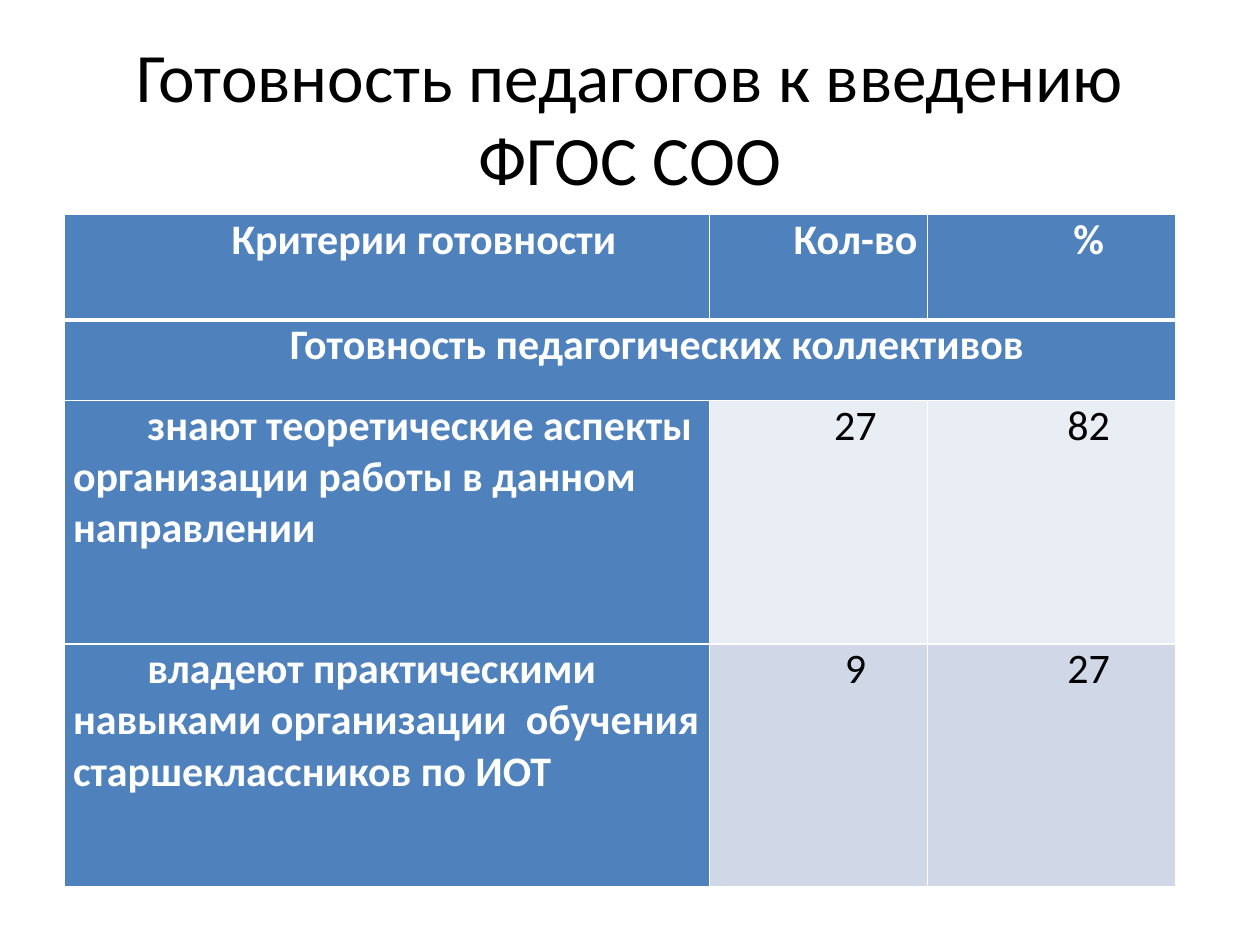
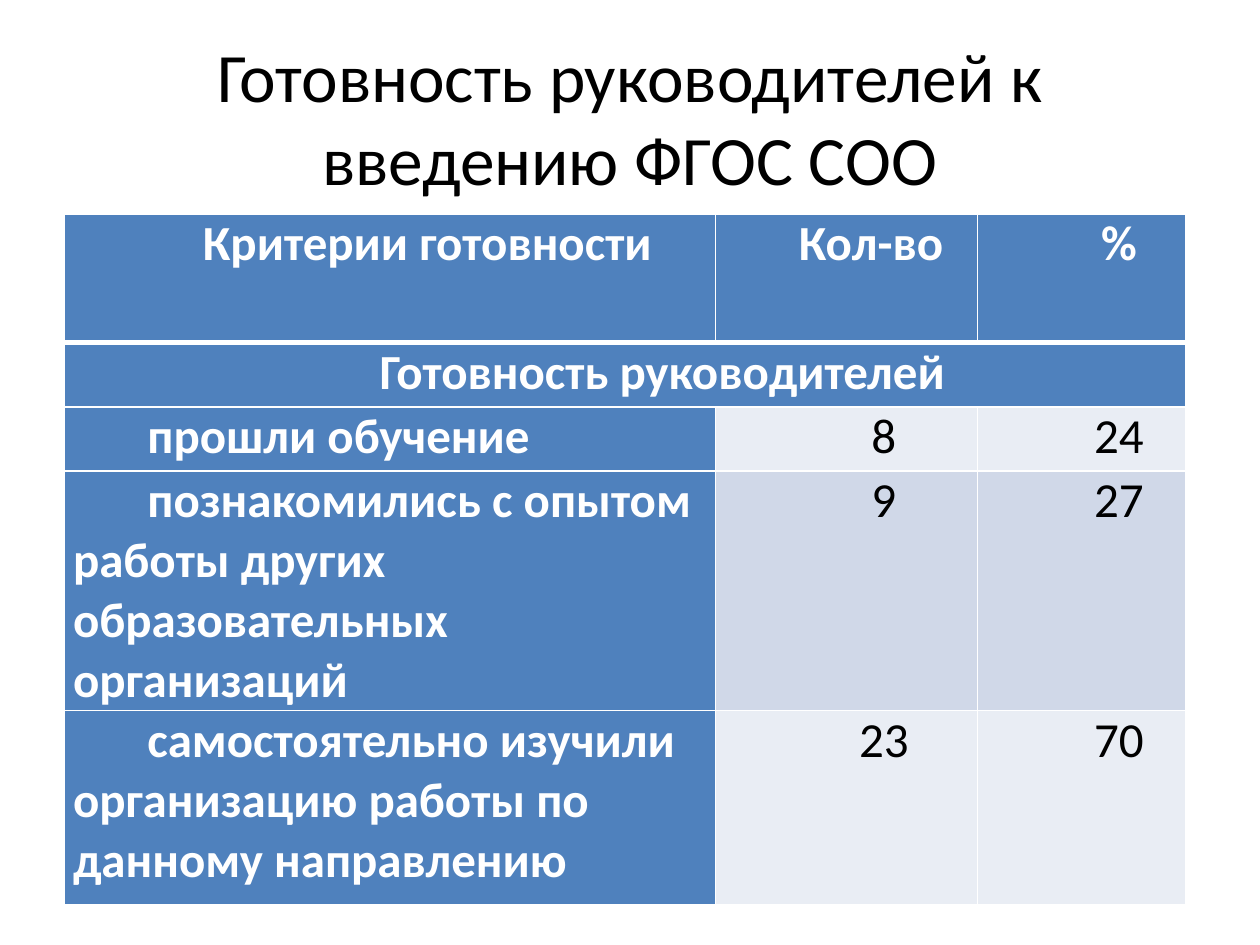
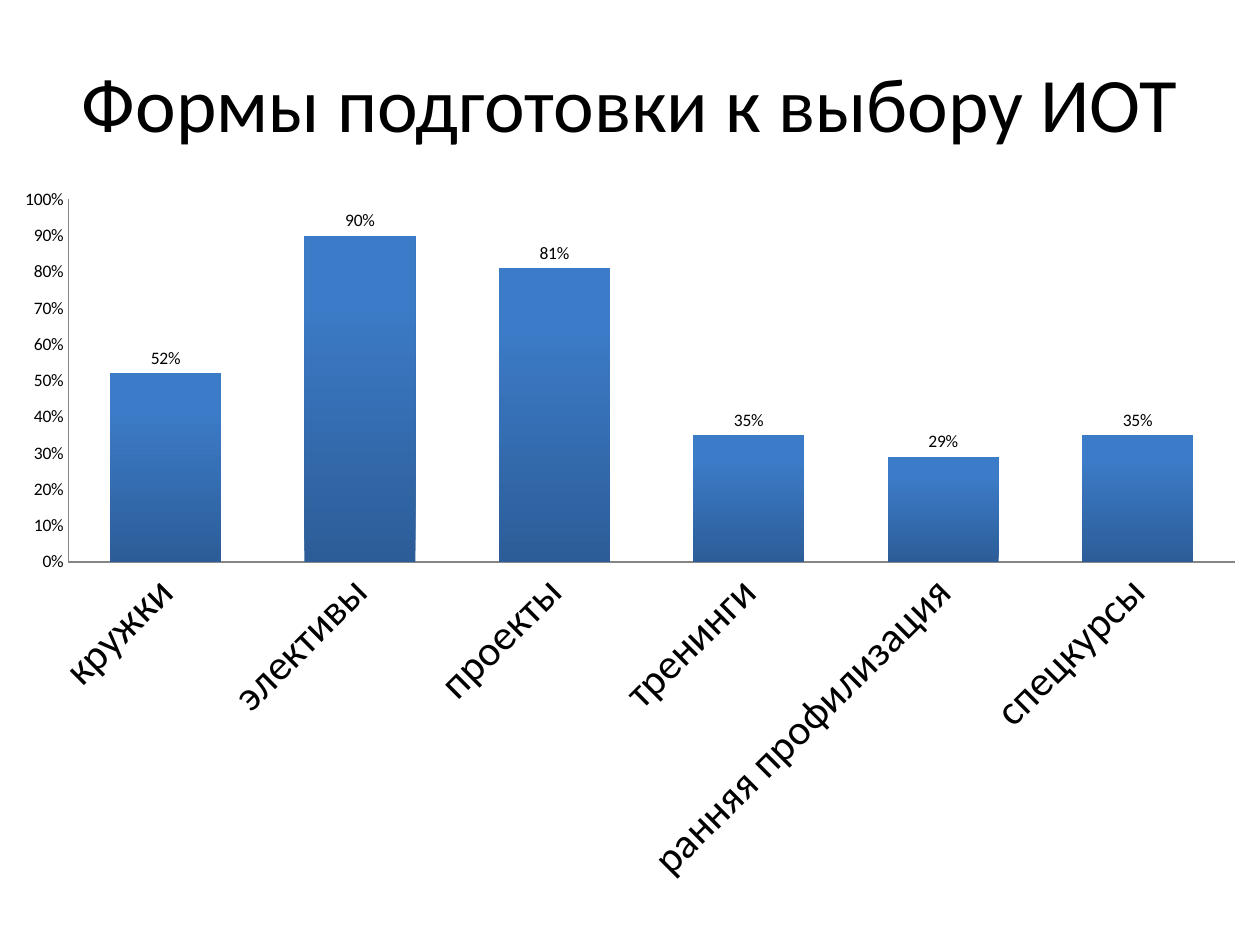
import dataclasses
import typing

import lxml.etree
import pptx
import pptx.chart.chart
import pptx.chart.data
import pptx.dml.color
import pptx.enum.chart
import pptx.enum.text
import pptx.oxml.ns
import pptx.presentation
import pptx.slide
import pptx.table
import pptx.util

RGBColor = pptx.dml.color.RGBColor
CENTER = pptx.enum.text.PP_ALIGN.CENTER
LEFT = pptx.enum.text.PP_ALIGN.LEFT

# Shared style
FONT = "Calibri"
BLACK = RGBColor(0x00, 0x00, 0x00)
WHITE = RGBColor(0xFF, 0xFF, 0xFF)
BLUE = RGBColor(0x4F, 0x81, 0xBD)
BAND_COLORS = (RGBColor(0xE9, 0xED, 0xF4), RGBColor(0xD0, 0xD8, 0xE8))
BAR_BOTTOM = RGBColor(0x2C, 0x5D, 0x98)
BAR_TOP = RGBColor(0x3C, 0x7B, 0xC7)
AXIS_GRAY = RGBColor(0x86, 0x86, 0x86)

# The slide is a grid of 10 columns and 7.5 rows
GRID_COLUMNS = 10
GRID_ROWS = 7.5
SLIDE_WIDTH = pptx.util.Inches(10)
SLIDE_HEIGHT = pptx.util.Inches(7.5)
TITLE_ONLY_LAYOUT = 5

CELL_MARGINS = {
    "margin_left": pptx.util.Inches(0.07),
    "margin_right": pptx.util.Inches(0.07),
    "margin_top": 0,
    "margin_bottom": 0,
}
FIRST_LINE_INDENT = pptx.util.Inches(0.59)
THIN_BORDER = 1
HEADER_BORDER = 3


@dataclasses.dataclass(frozen=True)
class Frame:
    """A place on the slide, in grid columns and rows."""

    left: float
    top: float
    width: float
    height: float


@dataclasses.dataclass(frozen=True)
class Criterion:
    name: str
    count: int
    percent: int


@dataclasses.dataclass(frozen=True)
class ReadinessSlide:
    title: str
    group: str
    criteria: tuple[Criterion, ...]
    column_widths: tuple[float, ...]
    row_heights: tuple[float, ...]
    font_size: float
    count_header_alignment: pptx.enum.text.PP_ALIGN


READINESS_SLIDES = (
    ReadinessSlide(
        title="Готовность педагогов к введению ФГОС СОО",
        group="Готовность педагогических коллективов",
        criteria=(
            Criterion("знают теоретические аспекты организации работы в данном направлении", 27, 82),
            Criterion("владеют практическими навыками организации  обучения старшеклассников по ИОТ", 9, 27),
        ),
        column_widths=(5.12, 1.73, 1.97),
        row_heights=(0.84, 0.64, 1.93, 1.93),
        font_size=24,
        count_header_alignment=CENTER,
    ),
    ReadinessSlide(
        title="Готовность руководителей к введению ФГОС СОО",
        group="Готовность руководителей",
        criteria=(
            Criterion("прошли обучение", 8, 24),
            Criterion("познакомились с опытом работы других образовательных организаций", 9, 27),
            Criterion("самостоятельно изучили организацию работы по данному направлению", 23, 70),
        ),
        column_widths=(5.17, 2.08, 1.65),
        row_heights=(1.02, 0.51, 0.51, 1.54, 1.54),
        font_size=28,
        count_header_alignment=LEFT,
    ),
)

TABLE_TITLE_FRAME = Frame(0.5, 0.3, 9, 1.25)
CHART_TITLE_FRAME = Frame(0.5, 0.3, 9, 1.01)
CHART_FRAME = Frame(0, 1.39, 10, 5.75)
TABLE_LEFT, TABLE_TOP = 0.51, 1.7

PREPARATION_FORMS = {
    "кружки": 0.52,
    "элективы": 0.9,
    "проекты": 0.81,
    "тренинги": 0.35,
    "ранняя профилизация": 0.29,
    "спецкурсы": 0.35,
}


def set_values(target: typing.Any, values: dict[str, typing.Any]) -> None:
    for name, value in values.items():
        setattr(target, name, value)


def across(columns: float) -> int:
    return round(SLIDE_WIDTH * columns / GRID_COLUMNS)


def down(rows: float) -> int:
    return round(SLIDE_HEIGHT * rows / GRID_ROWS)


def place(frame: Frame) -> dict[str, int]:
    return {
        "left": across(frame.left),
        "top": down(frame.top),
        "width": across(frame.width),
        "height": down(frame.height),
    }


def format_font(font: typing.Any, size: float, color: RGBColor = BLACK, bold: bool = False) -> None:
    set_values(font, {"name": FONT, "size": pptx.util.Pt(size), "bold": bold})
    font.color.rgb = color


def add_titled_slide(
    presentation: pptx.presentation.Presentation, text: str, frame: Frame, size: float
) -> pptx.slide.Slide:
    slide = presentation.slides.add_slide(presentation.slide_layouts[TITLE_ONLY_LAYOUT])
    title = slide.shapes.title
    set_values(title, place(frame))
    title.text_frame.text = text
    set_values(title.text_frame, {
        "word_wrap": True,
        "auto_size": pptx.enum.text.MSO_AUTO_SIZE.NONE,
        "vertical_anchor": pptx.enum.text.MSO_ANCHOR.MIDDLE,
    })
    paragraph = title.text_frame.paragraphs[0]
    paragraph.alignment = CENTER
    format_font(paragraph.runs[0].font, size)
    return slide


# Tables
def set_borders(cell: pptx.table._Cell, top: float, bottom: float) -> None:
    properties = cell._tc.get_or_add_tcPr()
    widths = {"lnL": THIN_BORDER, "lnR": THIN_BORDER, "lnT": top, "lnB": bottom}
    for position, (side, width) in enumerate(widths.items()):
        line = lxml.etree.Element(pptx.oxml.ns.qn(f"a:{side}"), w=str(pptx.util.Pt(width)))
        fill = lxml.etree.SubElement(line, pptx.oxml.ns.qn("a:solidFill"))
        lxml.etree.SubElement(fill, pptx.oxml.ns.qn("a:srgbClr"), val=str(WHITE))
        properties.insert(position, line)


def format_cell(cell: pptx.table._Cell, fill: RGBColor, row: int) -> None:
    set_values(cell, CELL_MARGINS)
    cell.fill.solid()
    cell.fill.fore_color.rgb = fill
    set_borders(
        cell,
        top=HEADER_BORDER if row == 1 else THIN_BORDER,
        bottom=HEADER_BORDER if row == 0 else THIN_BORDER,
    )


def write_cell(
    cell: pptx.table._Cell, text: str, size: float, alignment: pptx.enum.text.PP_ALIGN, heading: bool
) -> None:
    paragraph = cell.text_frame.paragraphs[0]
    paragraph.alignment = alignment
    paragraph._p.get_or_add_pPr().set("indent", str(FIRST_LINE_INDENT))
    run = paragraph.add_run()
    run.text = text
    format_font(run.font, size, WHITE if heading else BLACK, bold=heading)


def add_readiness_table(slide: pptx.slide.Slide, content: ReadinessSlide) -> None:
    rows = [("Критерии готовности", "Кол-во", "%"), (content.group,)]
    rows += [(item.name, str(item.count), str(item.percent)) for item in content.criteria]
    frame = Frame(TABLE_LEFT, TABLE_TOP, sum(content.column_widths), sum(content.row_heights))
    table = slide.shapes.add_table(len(rows), len(content.column_widths), **place(frame)).table
    for column, width in zip(table.columns, content.column_widths):
        column.width = across(width)
    for row, height in zip(table.rows, content.row_heights):
        row.height = down(height)

    for row_index, texts in enumerate(rows):
        for column_index in range(len(content.column_widths)):
            heading = row_index < 2 or column_index == 0
            fill = BLUE if heading else BAND_COLORS[row_index % 2]
            format_cell(table.cell(row_index, column_index), fill, row_index)
        for column_index, text in enumerate(texts):
            heading = row_index < 2 or column_index == 0
            alignment = LEFT if row_index >= 2 and column_index == 0 else CENTER
            if (row_index, column_index) == (0, 1):
                alignment = content.count_header_alignment
            write_cell(table.cell(row_index, column_index), text, content.font_size, alignment, heading)
    table.cell(1, 0).merge(table.cell(1, len(content.column_widths) - 1))


# Chart
def format_axes(chart: pptx.chart.chart.Chart) -> None:
    for axis, size in ((chart.category_axis, 24), (chart.value_axis, 10)):
        set_values(axis, {
            "has_major_gridlines": False,
            "major_tick_mark": pptx.enum.chart.XL_TICK_MARK.NONE,
            "minor_tick_mark": pptx.enum.chart.XL_TICK_MARK.NONE,
        })
        axis.format.line.color.rgb = AXIS_GRAY
        axis.format.line.width = pptx.util.Pt(0.75)
        format_font(axis.tick_labels.font, size)
    set_values(chart.value_axis, {"minimum_scale": 0, "maximum_scale": 1, "major_unit": 0.1})
    set_values(chart.value_axis.tick_labels, {"number_format": "0%", "number_format_is_linked": False})
    # Category names rise at 45 degrees
    for body in chart._chartSpace.xpath(".//c:catAx/c:txPr/a:bodyPr"):
        body.set("rot", "-2700000")
        body.set("vert", "horz")


def add_forms_chart(slide: pptx.slide.Slide) -> None:
    data = pptx.chart.data.CategoryChartData(number_format="0%")
    data.categories = list(PREPARATION_FORMS)
    data.add_series("Series 1", list(PREPARATION_FORMS.values()))
    chart = slide.shapes.add_chart(
        pptx.enum.chart.XL_CHART_TYPE.COLUMN_CLUSTERED, chart_data=data,
        **{{"left": "x", "top": "y", "width": "cx", "height": "cy"}[name]: value
           for name, value in place(CHART_FRAME).items()},
    ).chart
    set_values(chart, {"has_legend": False, "has_title": False})
    format_font(chart.font, 10)
    format_axes(chart)

    plot = chart.plots[0]
    set_values(plot, {"gap_width": 75, "vary_by_categories": False, "has_data_labels": True})
    set_values(plot.data_labels, {
        "show_value": True,
        "number_format": "0%",
        "number_format_is_linked": False,
        "position": pptx.enum.chart.XL_LABEL_POSITION.OUTSIDE_END,
    })
    format_font(plot.data_labels.font, 10)

    fill = plot.series[0].format.fill
    fill.gradient()
    fill.gradient_angle = 90
    for stop, color, position in zip(fill.gradient_stops, (BAR_BOTTOM, BAR_TOP), (0, 0.8)):
        stop.color.rgb = color
        stop.position = position


def main() -> None:
    presentation = pptx.Presentation()
    set_values(presentation, {"slide_width": SLIDE_WIDTH, "slide_height": SLIDE_HEIGHT})
    for content in READINESS_SLIDES:
        slide = add_titled_slide(presentation, content.title, TABLE_TITLE_FRAME, 39.6)
        add_readiness_table(slide, content)
    slide = add_titled_slide(presentation, "Формы подготовки к выбору ИОТ", CHART_TITLE_FRAME, 44)
    add_forms_chart(slide)
    presentation.save("out.pptx")


if __name__ == "__main__":
    main()
